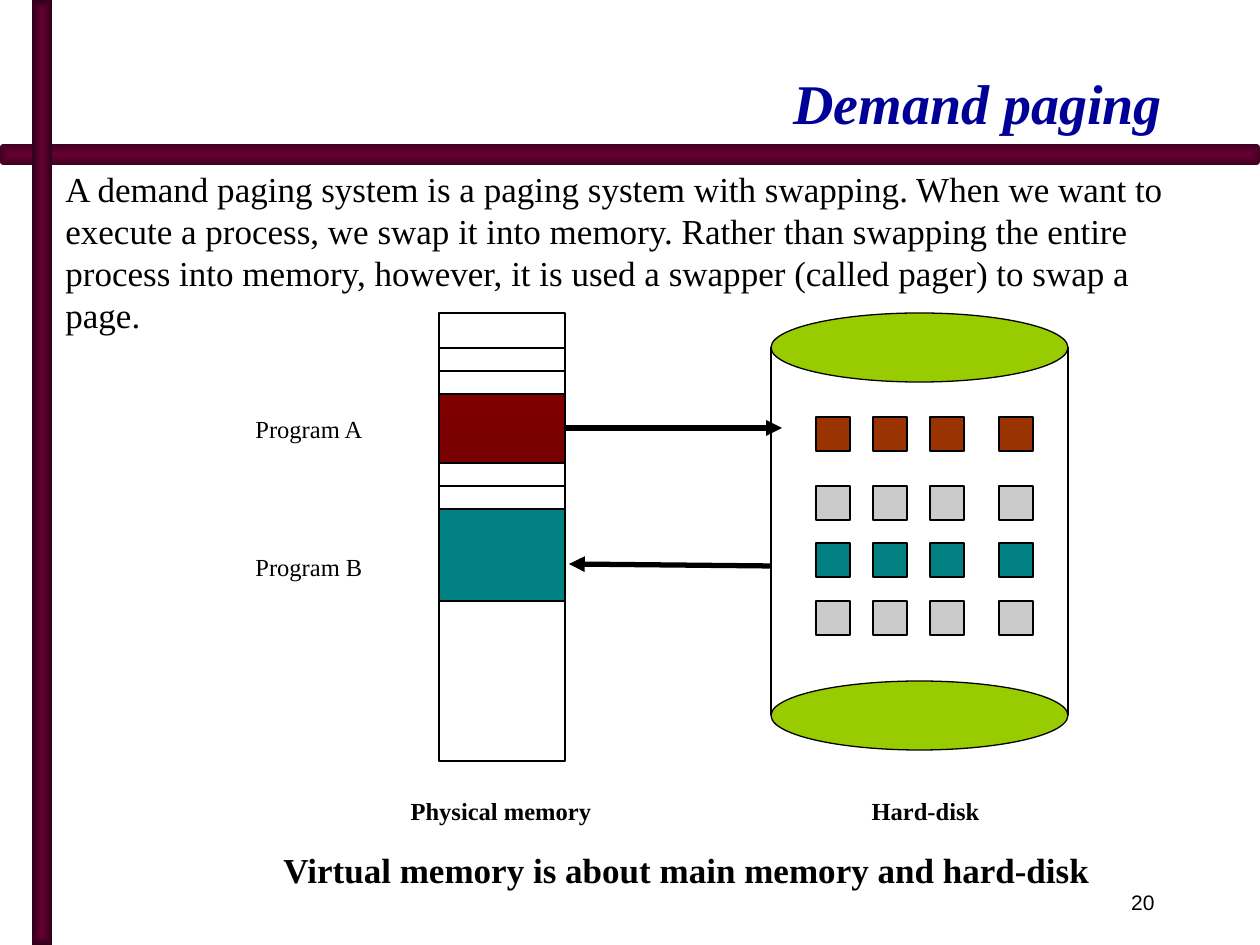
from itertools import product

from lxml.etree import SubElement
from pptx import Presentation
from pptx.dml.color import RGBColor
from pptx.enum.shapes import MSO_CONNECTOR, MSO_SHAPE
from pptx.enum.text import MSO_ANCHOR, MSO_AUTO_SIZE, PP_ALIGN
from pptx.oxml.ns import qn
from pptx.util import Pt

EMU_PER_PX = 914400 / 126
BLACK, GREY, TEAL, LIME, BROWN = "000000", "CBCBCB", "008080", "99CC00", "993300"


def px(length):
    return round(length * EMU_PER_PX)


def color(value):
    return RGBColor.from_string(value)


class SlideBuilder:
    """Draws styled elements on the current slide."""

    font = "Times New Roman"
    line_width = 0.75

    def __init__(self, presentation):
        self.slide = presentation.slides.add_slide(presentation.slide_layouts[5])

    def set_text(self, shape, text, size, ink=BLACK, bold=False, italic=False,
                 align=PP_ALIGN.LEFT, font=None):
        shape.text_frame.text = text
        paragraph = shape.text_frame.paragraphs[0]
        paragraph.alignment = align
        paragraph.font.name = font or self.font
        paragraph.font.size = Pt(size)
        paragraph.font.bold = bold
        paragraph.font.italic = italic
        paragraph.font.color.rgb = color(ink)
        return paragraph

    def title(self, text, left, top, width, height):
        shape = self.slide.shapes.title
        shape.left, shape.top, shape.width, shape.height = map(px, (left, top, width, height))
        shape.text_frame.vertical_anchor = MSO_ANCHOR.BOTTOM
        shape.text_frame.auto_size = MSO_AUTO_SIZE.NONE
        self.set_text(shape, text, 32, "000099", True, True, PP_ALIGN.RIGHT)

    def text(self, text, left, top, width, height, size, wrap=False, **style):
        shape = self.slide.shapes.add_textbox(*map(px, (left, top, width, height)))
        shape.text_frame.word_wrap = wrap
        return self.set_text(shape, text, size, **style)

    def shape(self, kind, left, top, width, height, fill=None, outline=True):
        shape = self.slide.shapes.add_shape(kind, *map(px, (left, top, width, height)))
        shape.shadow.inherit = False
        if fill:
            shape.fill.solid()
            shape.fill.fore_color.rgb = color(fill)
        else:
            shape.fill.background()
        if outline:
            shape.line.color.rgb = color(BLACK)
            shape.line.width = Pt(self.line_width)
        else:
            shape.line.fill.background()
        return shape

    def gradient(self, shape, start, end, angle=None):
        shape.fill.gradient()
        for stop, value in zip(shape.fill.gradient_stops, (start, end)):
            stop.color.rgb = color(value)
        if angle is not None:
            shape.fill.gradient_angle = angle
            return
        gradient = shape.element.spPr.find(qn("a:gradFill"))
        gradient.remove(gradient.find(qn("a:lin")))
        outward = SubElement(gradient, qn("a:path"), {"path": "shape"})
        SubElement(outward, qn("a:fillToRect"), dict.fromkeys("ltrb", "50000"))

    def line(self, x1, y1, x2, y2, width=line_width, arrow=False):
        connector = self.slide.shapes.add_connector(
            MSO_CONNECTOR.STRAIGHT, *map(px, (x1, y1, x2, y2)))
        connector.line.color.rgb = color(BLACK)
        connector.line.width = Pt(width)
        properties = connector.element.spPr
        if arrow:
            SubElement(properties.find(qn("a:ln")), qn("a:tailEnd"), {"type": "triangle"})
        SubElement(properties, qn("a:effectLst"))


def draw_frame(builder):
    horizontal = builder.shape(MSO_SHAPE.ROUNDED_RECTANGLE, 0, 144, 1260, 21, outline=False)
    horizontal.adjustments[0] = 0.17
    builder.gradient(horizontal, "660033", "410020")
    vertical = builder.shape(MSO_SHAPE.RECTANGLE, 32, 0, 20, 945, outline=False)
    builder.gradient(vertical, "660033", "2F0018")
    builder.text("20", 95, 883, 1072, 38, 12, wrap=True, align=PP_ALIGN.RIGHT, font="Arial")


def draw_memory(builder):
    left, width, first_line, step = 439, 126, 348, 23
    builder.shape(MSO_SHAPE.RECTANGLE, left, 313, width, 448)
    for index in range(12):
        y = first_line + index * step
        builder.line(left, y, left + width, y)
    program_a = builder.shape(
        MSO_SHAPE.RECTANGLE, left, first_line + 2 * step, width, 3 * step)
    builder.gradient(program_a, "800000", "780000", 270)
    builder.shape(MSO_SHAPE.RECTANGLE, left, first_line + 7 * step, width, 4 * step, TEAL)
    for name, top in (("Program A", 408), ("Program B", 546)):
        builder.text(name, 243, top, 143, 46, 14)


def draw_disk(builder):
    left, width, top, bottom, lid = 771, 297, 313, 681, 69
    for y in (top, bottom):
        builder.shape(MSO_SHAPE.OVAL, left, y, width, lid, LIME)
    for x in (left, left + width):
        builder.line(x, top + lid // 2, x, bottom + lid // 2)
    rows = ((417, BROWN), (486, GREY), (543, TEAL), (601, GREY))
    for (y, fill), x in product(rows, (816, 873, 930, 999)):
        builder.shape(MSO_SHAPE.RECTANGLE, x, y, 34, 34, fill)


def main():
    presentation = Presentation()
    presentation.slide_width, presentation.slide_height = px(1260), px(945)
    builder = SlideBuilder(presentation)
    draw_frame(builder)
    builder.title("Demand paging", 104, 21, 1071, 121)
    body = builder.text(
        "A demand paging system is a paging system with swapping. When we want to execute "
        "a process, we swap it into memory. Rather than swapping the entire process into "
        "memory, however, it is used a swapper (called pager) to swap a page.",
        53, 161, 1166, 166, 20, wrap=True)
    body.line_spacing = Pt(24)
    body.space_before = body.space_after = Pt(2)
    draw_memory(builder)
    draw_disk(builder)
    builder.line(565, 428, 782, 428, 3, arrow=True)
    builder.line(771, 566, 569, 564, 3, arrow=True)
    for caption, left, width in (("Physical memory", 388, 226), ("Hard-disk", 853, 145)):
        builder.text(caption, left, 790, width, 46, 14, bold=True, align=PP_ALIGN.CENTER)
    builder.text("Virtual memory is about main memory and hard-disk",
                 271, 842, 833, 55, 20, bold=True)
    presentation.save("out.pptx")


if __name__ == "__main__":
    main()
